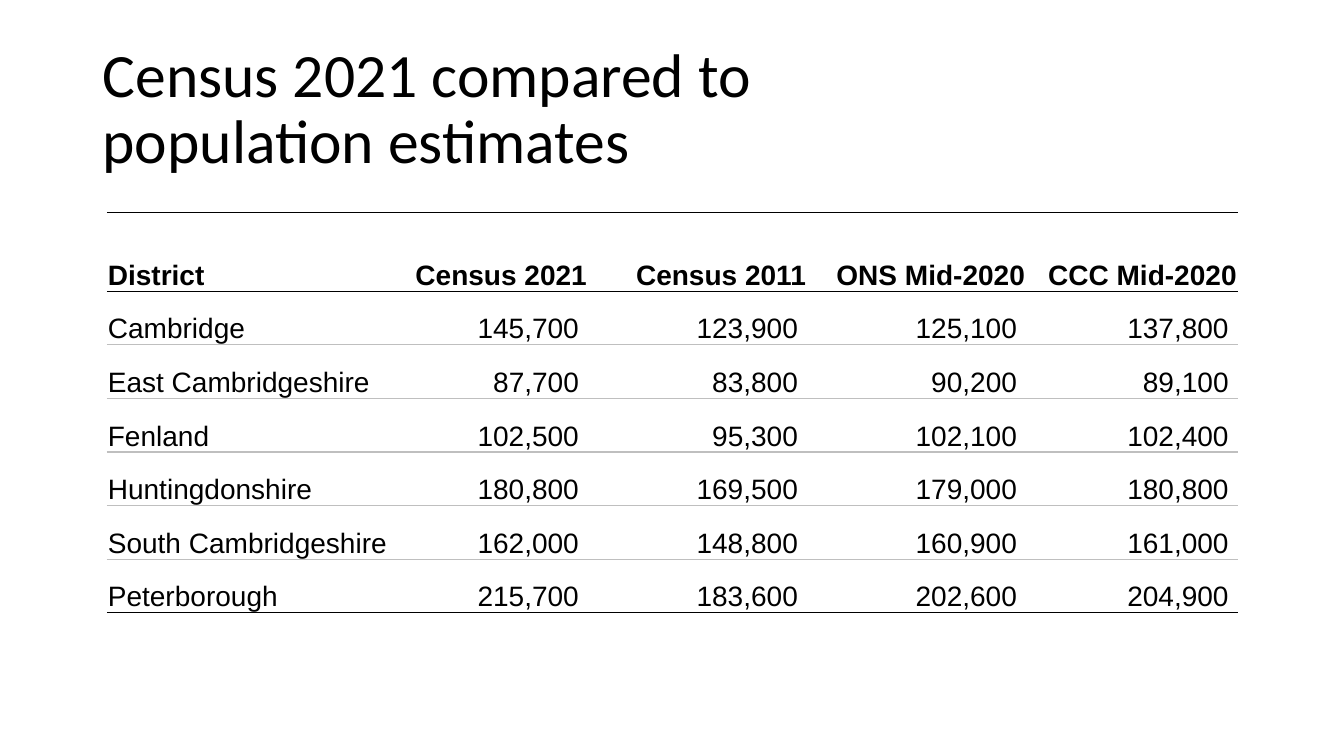
import pptx
import pptx.dml.color
import pptx.enum.text
import pptx.oxml
import pptx.oxml.ns
import pptx.util

COLORS = {"ink": "000000", "rule": "BFBFBF"}
ALIGN = pptx.enum.text.PP_ALIGN
ANCHOR = pptx.enum.text.MSO_ANCHOR
HEADINGS = ["District", "Census 2021", "Census 2011", "ONS Mid-2020", "CCC Mid-2020"]
POPULATIONS = [
    ("Cambridge", 145700, 123900, 125100, 137800),
    ("East Cambridgeshire", 87700, 83800, 90200, 89100),
    ("Fenland", 102500, 95300, 102100, 102400),
    ("Huntingdonshire", 180800, 169500, 179000, 180800),
    ("South Cambridgeshire", 162000, 148800, 160900, 161000),
    ("Peterborough", 215700, 183600, 202600, 204900),
]


class Page:
    def __init__(self, deck):
        self.deck = deck
        self.slide = deck.slides.add_slide(deck.slide_layouts[6])

    def across(self, percent):
        return round(self.deck.slide_width * percent / 100)

    def down(self, percent):
        return round(self.deck.slide_height * percent / 100)

    def style(self, target, formats):
        for name, value in formats.items():
            setattr(target, name, value)

    def add_text(self, frame, text, font, size, bold=False, **paragraph_formats):
        para = frame.paragraphs[0]
        self.style(para, paragraph_formats)
        span = para.add_run()
        span.text = text
        self.style(span.font, {"name": font, "size": pptx.util.Pt(size), "bold": bold})
        span.font.color.rgb = pptx.dml.color.RGBColor.from_string(COLORS["ink"])

    def title(self, text, left, top, width, height):
        box = self.slide.shapes.add_textbox(
            self.across(left), self.down(top), self.across(width), self.down(height))
        self.style(box.text_frame, {"word_wrap": True, "vertical_anchor": ANCHOR.MIDDLE})
        self.add_text(box.text_frame, text, "Calibri", 44, line_spacing=0.9)

    def border(self, cell, side, color=None):
        paint = "<a:noFill/>"
        if color:
            paint = f'<a:solidFill><a:srgbClr val="{COLORS[color]}"/></a:solidFill>'
        namespace = pptx.oxml.ns.nsdecls("a")
        line = pptx.oxml.parse_xml(
            f'<a:ln{side} {namespace} w="{pptx.util.Pt(1)}">{paint}</a:ln{side}>')
        cell._tc.get_or_add_tcPr().append(line)

    def table(self, rows, left, top, widths, heights):
        frame = self.slide.shapes.add_table(
            len(rows), len(widths), self.across(left), self.down(top),
            self.across(sum(widths)), self.down(sum(heights)))
        table = frame.table
        self.style(table, {"first_row": False, "horz_banding": False})
        for column, width in zip(table.columns, widths):
            column.width = self.across(width)
        for row, height in zip(table.rows, heights):
            row.height = self.down(height)
        last = len(rows) - 1
        for row_index, values in enumerate(rows):
            for column_index, value in enumerate(values):
                cell = table.cell(row_index, column_index)
                self.border(cell, "L")
                self.border(cell, "R")
                self.border(cell, "T", "ink" if row_index < 2 else "rule")
                self.border(cell, "B", "ink" if row_index in (0, last) else "rule")
                cell.fill.background()
                is_number = isinstance(value, int)
                edge = pptx.util.Inches(0.01)
                self.style(cell, {
                    "margin_left": edge,
                    "margin_top": edge,
                    "margin_right": pptx.util.Inches(0.09) if is_number else edge,
                    "margin_bottom": 0,
                    "vertical_anchor": ANCHOR.BOTTOM,
                })
                self.add_text(
                    cell.text_frame, f"{value:,}" if is_number else value, "Arial", 20,
                    bold=row_index == 0,
                    alignment=ALIGN.RIGHT if column_index else ALIGN.LEFT)


def main():
    deck = pptx.Presentation()
    deck.slide_width = pptx.util.Inches(13.33)
    deck.slide_height = pptx.util.Inches(7.5)
    page = Page(deck)
    page.table(
        [HEADINGS, *POPULATIONS], 7.95, 28.13,
        widths=[22.5, 13.3, 16.3, 16.3, 15.75],
        heights=[10.4] + [7.09] * len(POPULATIONS))
    page.title("Census 2021 compared to population estimates", 6.9, 4.53, 59.2, 20.13)
    deck.save("out.pptx")


if __name__ == "__main__":
    main()
